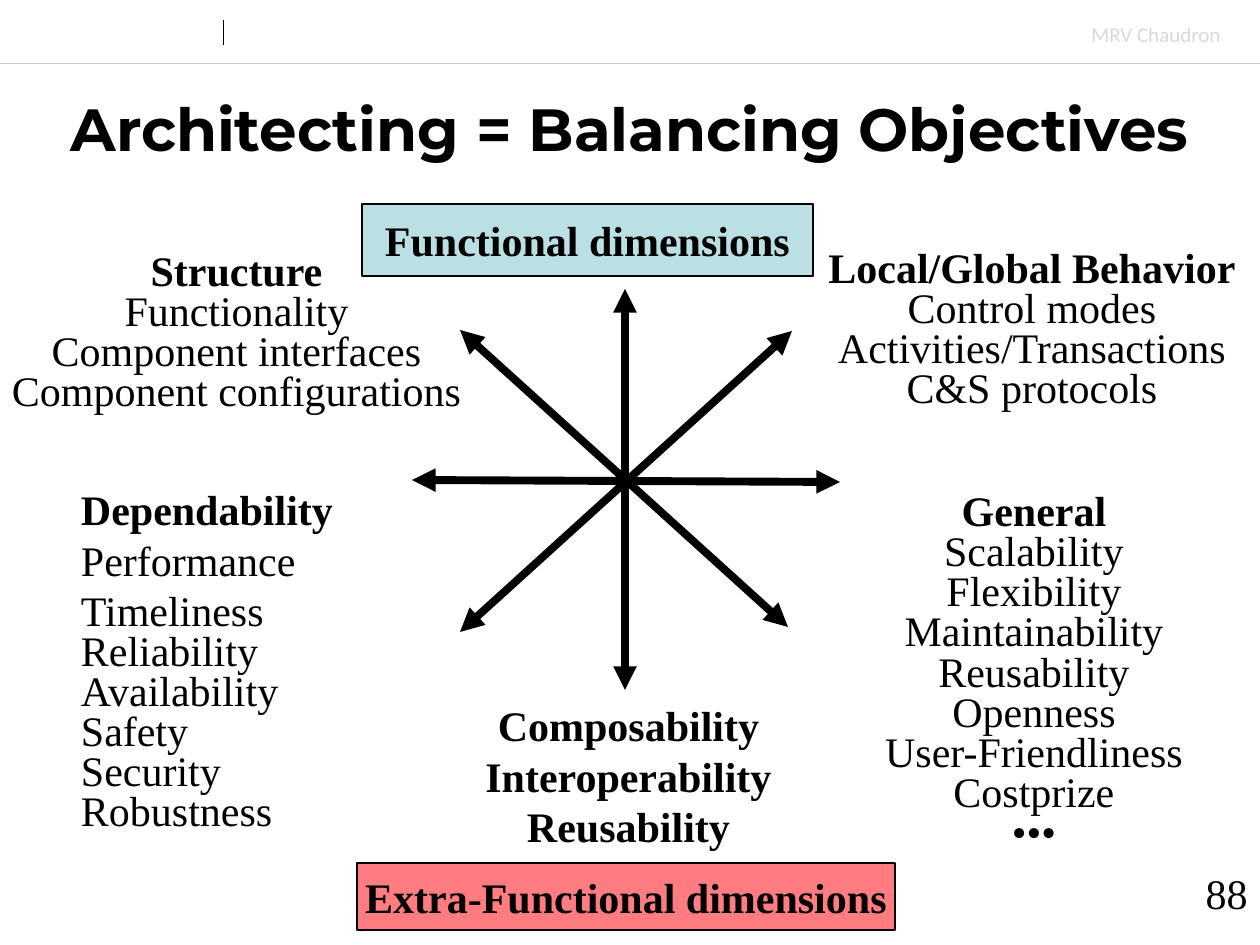
from dataclasses import dataclass

from lxml import etree
from pptx import Presentation
from pptx.dml.color import RGBColor
from pptx.enum.shapes import MSO_CONNECTOR, MSO_SHAPE
from pptx.enum.text import MSO_ANCHOR, PP_ALIGN
from pptx.oxml.ns import qn
from pptx.util import Emu, Pt

LEFT, CENTER, RIGHT = PP_ALIGN.LEFT, PP_ALIGN.CENTER, PP_ALIGN.RIGHT
TOP, MIDDLE = MSO_ANCHOR.TOP, MSO_ANCHOR.MIDDLE
RECT, STRAIGHT = MSO_SHAPE.RECTANGLE, MSO_CONNECTOR.STRAIGHT
PX = 914400 / 126


def px(*values):
    return [Emu(round(v * PX)) for v in values]


@dataclass(frozen=True)
class Theme:
    ink: str = "000000"
    rule: str = "CCCCCC"
    muted: str = "D9D9D9"
    functional: str = "BBE0E3"
    extra: str = "FF7C80"
    body_font: str = "Times New Roman"
    title_font: str = "Montserrat"
    header_font: str = "Calibri"
    body: int = 24
    title: int = 34
    header: int = 12
    tight: float = 22.9


class Deck:
    def __init__(self, theme):
        self.theme = theme
        self.prs = Presentation()
        self.prs.slide_width, self.prs.slide_height = px(1260, 945)
        self.s = self.prs.slides.add_slide(self.prs.slide_layouts[6])

    def fill_text(self, tf, lines, align=CENTER, bold=0, font=None, size=None,
                  color=None, spacing=None, loose=()):
        t = self.theme
        for i, line in enumerate(lines):
            p = tf.paragraphs[0] if i == 0 else tf.add_paragraph()
            p.alignment = align
            if spacing and line not in loose:
                p.line_spacing = Pt(spacing)
            r = p.add_run()
            r.text = line
            r.font.name = font or t.body_font
            r.font.size = Pt(size or t.body)
            r.font.bold = i < bold
            r.font.color.rgb = RGBColor.from_string(color or t.ink)

    def text(self, box, lines, anchor=TOP, wrap=True, flush=False, **style):
        tf = self.s.shapes.add_textbox(*px(*box)).text_frame
        tf.word_wrap = wrap
        tf.vertical_anchor = anchor
        if flush:
            tf.margin_left = tf.margin_top = tf.margin_right = tf.margin_bottom = 0
        self.fill_text(tf, lines, **style)

    def label(self, box, line, fill):
        sp = self.s.shapes.add_shape(RECT, *px(*box))
        sp.shadow.inherit = False
        sp.fill.solid()
        sp.fill.fore_color.rgb = RGBColor.from_string(fill)
        sp.line.color.rgb = RGBColor.from_string(self.theme.ink)
        sp.line.width = Pt(1)
        tf = sp.text_frame
        tf.word_wrap = False
        tf.vertical_anchor = MIDDLE
        self.fill_text(tf, [line], bold=1)

    def line(self, ends, color, width, arrows=False):
        sp = self.s.shapes.add_connector(STRAIGHT, *px(*ends))
        sp.line.color.rgb = RGBColor.from_string(color)
        sp.line.width = Pt(width)
        if arrows:
            ln = sp._element.spPr.find(qn("a:ln"))
            for tag in ("a:headEnd", "a:tailEnd"):
                etree.SubElement(ln, qn(tag), type="triangle")
        etree.SubElement(sp._element.spPr, qn("a:effectLst"))


def main():
    t = Theme()
    deck = Deck(t)
    deck.line((0, 63, 1260, 63), t.rule, 0.25)
    deck.line((223, 20, 223, 45), t.ink, 0.5)
    deck.text((1079, 15, 155, 38), ["MRV Chaudron"], wrap=False, align=LEFT,
              font=t.header_font, size=t.header, color=t.muted)
    deck.text((0, 81, 1260, 94), ["Architecting = Balancing Objectives"],
              anchor=MIDDLE, bold=1, font=t.title_font, size=t.title)
    deck.text((998, 861, 262, 63), ["88"], align=RIGHT)

    deck.text((-5, 255, 483, 160),
              ["Structure", "Functionality", "Component interfaces",
               "Component configurations"],
              flush=True, bold=1, spacing=t.tight)
    deck.text((814, 252, 436, 160),
              ["Local/Global Behavior", "Control modes",
               "Activities/Transactions", "C&S protocols"],
              flush=True, bold=1, spacing=t.tight)
    deck.text((885, 495, 298, 360),
              ["General", "Scalability", "Flexibility", "Maintainability",
               "Reusability", "Openness", "User-Friendliness", "Costprize",
               "•••"],
              flush=True, wrap=False, bold=1, spacing=t.tight)
    deck.text((485, 700, 287, 151),
              ["Composability", "Interoperability", "Reusability"],
              flush=True, wrap=False, bold=3)
    deck.text((81, 494, 252, 390),
              ["Dependability", "Performance", "Timeliness", "Reliability",
               "Availability", "Safety", "Security", "Robustness"],
              flush=True, wrap=False, align=LEFT, bold=1, spacing=t.tight,
              loose=("Performance", "Timeliness"))

    for spoke in ((625, 289, 625, 690), (412, 480, 840, 482),
                  (788, 627, 460, 330), (460, 632, 792, 331)):
        deck.line(spoke, t.ink, 4.5, arrows=True)

    deck.label((362, 204, 451, 72), "Functional dimensions", t.functional)
    deck.label((357, 863, 538, 67), "Extra-Functional dimensions", t.extra)
    deck.prs.save("out.pptx")


if __name__ == "__main__":
    main()
